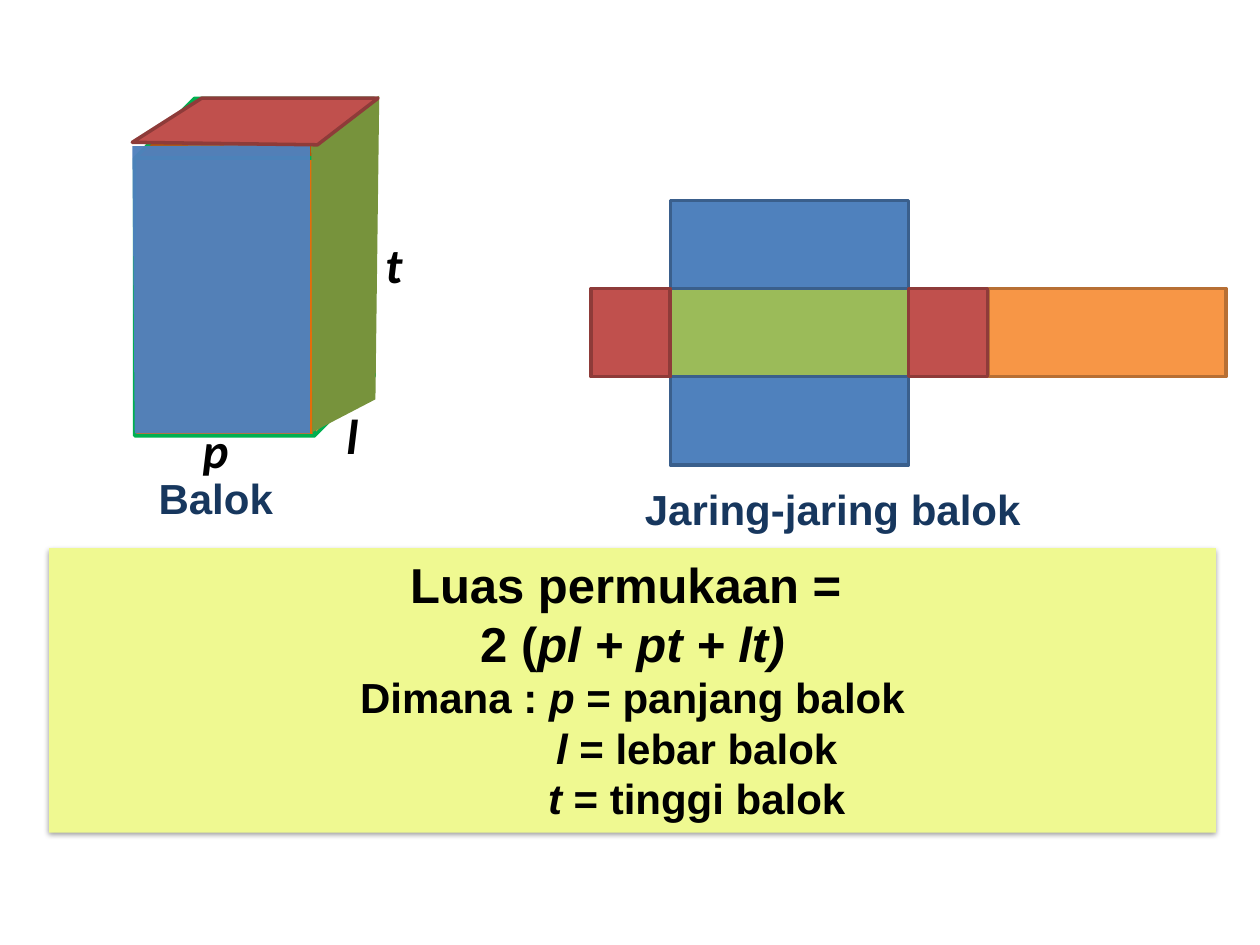
from dataclasses import dataclass
from lxml.etree import SubElement
from pptx import Presentation
from pptx.dml.color import RGBColor
from pptx.enum.shapes import MSO_SHAPE
from pptx.enum.text import MSO_ANCHOR, PP_ALIGN
from pptx.oxml.ns import qn
from pptx.util import Inches, Pt


@dataclass(frozen=True)
class Theme:
    blue: str = "4F81BD"
    blue_line: str = "3A5F8C"
    red: str = "C0504D"
    red_line: str = "8E3B39"
    green: str = "9BBB59"
    green_line: str = "738A42"
    orange: str = "F79646"
    orange_line: str = "B76F34"
    cube: str = "E46C0A"
    cube_line: str = "00B050"
    side: str = "77933C"
    panel: str = "EFF991"
    caption: str = "17375E"
    ink: str = "000000"
    line: float = 2
    large: int = 28
    medium: int = 24
    font: str = "Arial"
    letter_font: str = "Calibri"


class SlideBuilder:
    def __init__(self, s, theme):
        self.s = s
        self.theme = theme
        self.shapes = s.shapes

    def group(self):
        self.shapes = self.s.shapes.add_group_shape().shapes

    def ungroup(self):
        self.shapes = self.s.shapes

    def paint(self, sp, fill, line=None):
        sp.shadow.inherit = False
        sp.fill.solid()
        sp.fill.fore_color.rgb = RGBColor.from_string(fill)
        if line:
            sp.line.color.rgb = RGBColor.from_string(line)
            sp.line.width = Pt(self.theme.line)
        else:
            sp.line.fill.background()
        return sp

    def shape(self, kind, x, y, w, h, fill, line=None):
        sp = self.shapes.add_shape(kind, Inches(x), Inches(y), Inches(w), Inches(h))
        return self.paint(sp, fill, line)

    def face(self, points, fill, line=None, alpha=None):
        start, *rest = [(Inches(x), Inches(y)) for x, y in points]
        fb = self.shapes.build_freeform(*start)
        fb.add_line_segments(rest, close=True)
        sp = self.paint(fb.convert_to_shape(), fill, line)
        if alpha:
            color = sp._element.spPr.find(qn("a:solidFill"))[0]
            SubElement(color, qn("a:alpha"), val=str(alpha * 1000))

    def run(self, p, text, size, color, font, italic=False):
        r = p.add_run()
        r.text = text
        r.font.size = Pt(size)
        r.font.name = font
        r.font.bold = True
        r.font.italic = italic
        r.font.color.rgb = RGBColor.from_string(color)

    def label(self, text, x, y, w, h, size, color, font, italic=False, wrap=False):
        sp = self.shapes.add_textbox(Inches(x), Inches(y), Inches(w), Inches(h))
        tf = sp.text_frame
        tf.word_wrap = wrap
        self.run(tf.paragraphs[0], text, size, color, font, italic)

    def panel(self, x, y, w, h, lines):
        sp = self.shape(MSO_SHAPE.RECTANGLE, x, y, w, h, self.theme.panel)
        effects = sp._element.spPr.find(qn("a:effectLst"))
        shadow = SubElement(effects, qn("a:outerShdw"), blurRad="40000",
                            dist="20000", dir="5400000", rotWithShape="0")
        color = SubElement(shadow, qn("a:srgbClr"), val=self.theme.ink)
        SubElement(color, qn("a:alpha"), val="38000")
        tf = sp.text_frame
        tf.word_wrap = True
        tf.vertical_anchor = MSO_ANCHOR.TOP
        for i, (size, indent, runs) in enumerate(lines):
            p = tf.add_paragraph() if i else tf.paragraphs[0]
            p.alignment = PP_ALIGN.CENTER
            if indent:
                p._p.get_or_add_pPr().set("marL", str(Inches(indent)))
            for text, italic in runs:
                self.run(p, text, size, self.theme.ink, self.theme.font, italic)


def draw_net(b):
    t = b.theme
    x, y, length, width, height = 5.32, 2.29, 1.89, 0.63, 0.7
    b.group()
    for dx, dy, w, fill, line in (
        (0, 0, length, t.green, t.green_line),
        (0, -height, length, t.blue, t.blue_line),
        (0, height, length, t.blue, t.blue_line),
        (length + width, 0, length, t.orange, t.orange_line),
        (length, 0, width, t.red, t.red_line),
        (-width, 0, width, t.red, t.red_line),
    ):
        b.shape(MSO_SHAPE.RECTANGLE, x + dx, y + dy, w, height, fill, line)
    b.ungroup()


def draw_block(b):
    t = b.theme
    b.group()
    cube = b.shape(MSO_SHAPE.CUBE, 0.68, 1.17, 2.68, 1.9, t.cube, t.cube_line)
    cube.rotation = 90
    cube._element.spPr.xfrm.set("flipH", "1")
    b.face([(2.46, 3.44), (1.07, 3.44), (1.05, 1.16), (2.46, 1.15)], t.blue, alpha=97)
    b.face([(2.48, 3.43), (2.98, 3.17), (3.01, 0.76), (2.47, 1.08)], t.side)
    b.face([(1.05, 1.13), (2.52, 1.15), (3, 0.78), (1.6, 0.78)], t.red, t.red_line)
    for text, x, y in (("t", 2.96, 1.81), ("l", 2.65, 3.17), ("p", 1.51, 3.28)):
        b.label(text, x, y, 1, 0.57, t.large, t.ink, t.letter_font, True, True)
    b.ungroup()


def main():
    prs = Presentation()
    prs.slide_width, prs.slide_height = Inches(10), Inches(7.5)
    t = Theme()
    b = SlideBuilder(prs.slides.add_slide(prs.slide_layouts[6]), t)
    draw_net(b)
    b.label("Balok", 1.16, 3.7, 1.12, 0.5, t.medium, t.caption, t.font)
    b.panel(0.39, 4.35, 9.26, 2.26, [
        (t.large, 0, [("Luas permukaan = ", False)]),
        (t.large, 0, [("2 (", False), ("pl + pt + lt)", True)]),
        (t.medium, 0, [("Dimana : ", False), ("p", True), (" = panjang balok", False)]),
        (t.medium, 1.02, [("l", True), (" = lebar balok", False)]),
        (t.medium, 1.02, [("t", True), (" = tinggi balok", False)]),
    ])
    b.label("Jaring-jaring balok", 5.02, 3.79, 3.21, 0.5, t.medium, t.caption, t.font)
    draw_block(b)
    prs.save("out.pptx")


if __name__ == "__main__":
    main()
